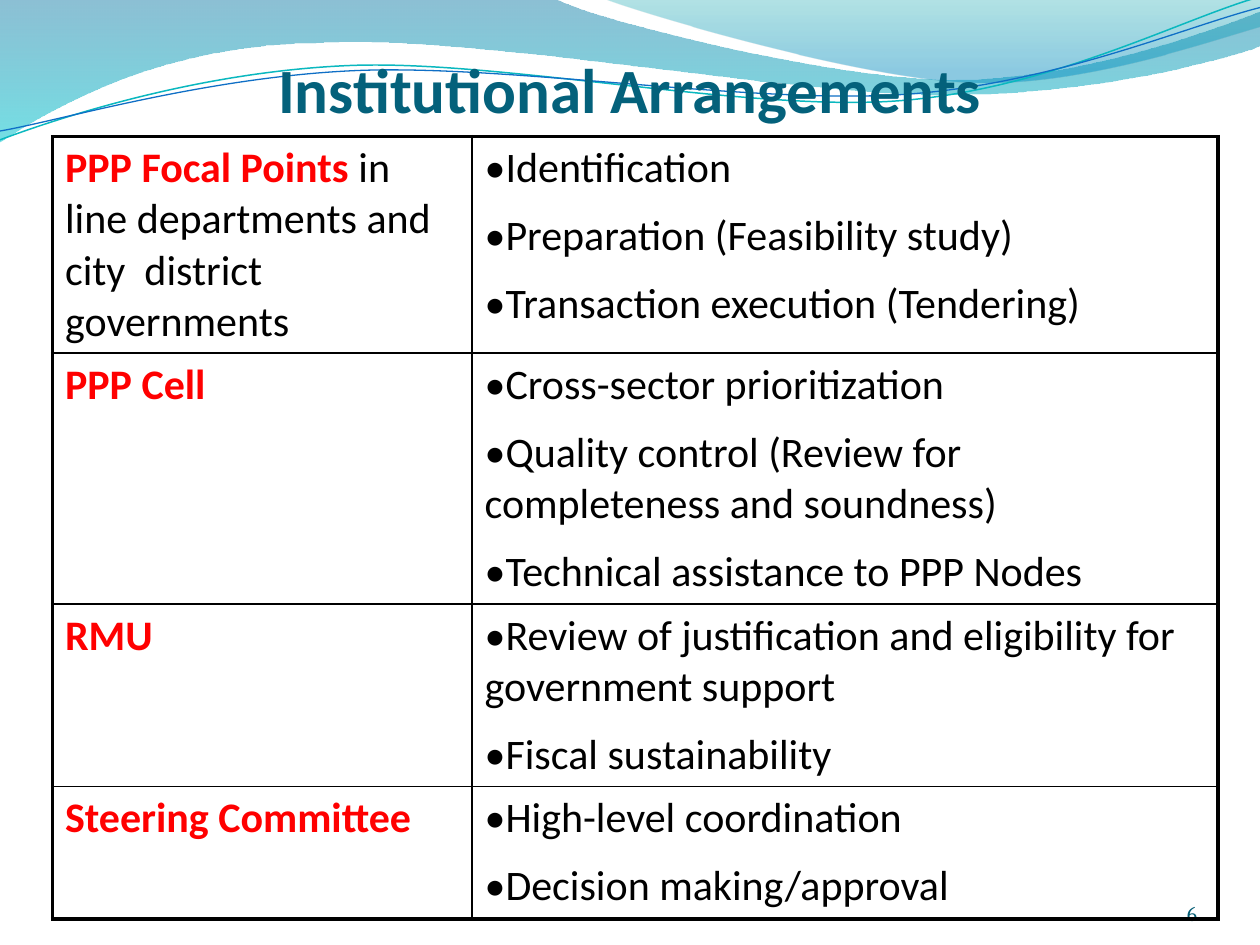
import collections
import math

import lxml.etree
import pptx
import pptx.dml.color
import pptx.enum.text
import pptx.oxml.ns
import pptx.util

Box = collections.namedtuple("Box", "left top width height")
COLUMNS, ROWS = 10, 7.5
HEADER = Box(0, 0, 10, 1.14)
TITLE = Box(0.5, 0.33, 9, 0.67)
NUMBER = Box(8.67, 6.95, 0.83, 0.4)
TABLE = Box(5 / 12, 13 / 12, 9.25, 6.21)
COLUMN_SHARES = (0.36, 0.64)
ROW_HEIGHTS = (1.72, 1.99, 1.45, 1.05)
BLACK, RED = "000000", "FF0000"
THICK, THIN = 2.25, 1
TILT = -2.7
STRAND_CENTER = (4.99, 0.58)

WAVES = [
    ((0, -0.01),
     [[(4.4, -0.01)],
      [(4.76, 0.17), (6.64, 0.63), (7.58, 0.63)],
      [(8.53, 0.63), (9.58, 0.26), (10, 0.09)],
      [(10.01, 0.36)],
      [(9.83, 0.44), (8.7, 0.76), (7.46, 0.75)],
      [(6.22, 0.75), (3.82, 0.28), (2.57, 0.34)],
      [(1.29, 0.35), (0.46, 0.83), (-0.01, 1.13)],
      [(0, -0.01)]],
     [(0, "0074A1", 45), (1, "00C6CF", 55)]),
    ((4.79, -0.01),
     [[(5.09, 0.11), (6.82, 0.62), (7.69, 0.65)],
      [(8.56, 0.69), (9.61, 0.32), (10, 0.21)],
      [(10, 0)],
      [(4.79, -0.01)]],
     [(0, "00A1A9", 30), (0.8, "008BBF", 45)]),
]
STRANDS = [
    ((0, 1.11),
     [[(0.48, 0.93), (1.58, 0.57), (2.77, 0.52)],
      [(3.95, 0.47), (5.93, 0.89), (7.13, 0.8)],
      [(8.33, 0.71), (9.38, 0.15), (9.98, -0.02)]],
     "0AB8BF", 0.85),
    ((0, 1.04),
     [[(0.47, 0.96), (1.64, 0.61), (2.83, 0.56)],
      [(4.03, 0.51), (5.97, 0.83), (7.17, 0.75)],
      [(8.36, 0.67), (9.41, 0.21), (10, 0.06)]],
     "0F6FC6", 0.75),
]
ARRANGEMENTS = [
    ("PPP Focal Points ", "in line departments and city  district governments",
     ["Identification", "Preparation (Feasibility study)",
      "Transaction execution (Tendering)"]),
    ("PPP Cell", "",
     ["Cross-sector prioritization",
      "Quality control (Review for completeness and soundness)",
      "Technical assistance to PPP Nodes"]),
    ("RMU", "",
     ["Review of justification and eligibility for government support",
      "Fiscal sustainability"]),
    ("Steering Committee", "",
     ["High-level coordination", "Decision making/approval"]),
]


def color(value):
    """Turn a hex string into a colour."""
    return pptx.dml.color.RGBColor.from_string(value)


def add_node(parent, tag, **attributes):
    """Append a drawing element with the given attributes."""
    node = lxml.etree.SubElement(parent, pptx.oxml.ns.qn(tag))
    for name, value in attributes.items():
        node.set(name, str(value))
    return node


def style_span(span, size, font, value, bold=False):
    """Set size, font, colour and weight of a run."""
    span.font.size = pptx.util.Pt(size)
    span.font.name = font
    span.font.color.rgb = color(value)
    span.font.bold = bold


def level(point):
    """Undo the tilt of a strand's point around the strands' centre."""
    angle = math.radians(-TILT)
    dx, dy = (value - middle for value, middle in zip(point, STRAND_CENTER))
    return (STRAND_CENTER[0] + dx * math.cos(angle) - dy * math.sin(angle),
            STRAND_CENTER[1] + dx * math.sin(angle) + dy * math.cos(angle))


def add_outline(page, box, start, segments, close):
    """Draw a freeform of lines and cubic curves inside a box."""
    points = [start] + [point for segment in segments for point in segment]
    placed = [(pptx.util.Inches(box.left + x), pptx.util.Inches(box.top + y))
              for x, y in points]
    builder = page.shapes.build_freeform(*placed[0], scale=1.0)
    builder.add_line_segments(placed[1:], close=close)
    shape = builder.convert_to_shape()
    shape.shadow.inherit = False
    lines = iter(list(shape.element.iter(pptx.oxml.ns.qn("a:lnTo"))))
    for segment in segments:
        group = [next(lines) for _ in segment]
        if len(group) == 3:
            curve = add_node(group[0].getparent(), "a:cubicBezTo")
            group[0].addprevious(curve)
            for line in group:
                curve.append(line[0])
                line.getparent().remove(line)
    return shape


def add_header(page, box):
    """Place the translucent waves and the thin strands."""
    for start, segments, stops in WAVES:
        wave = add_outline(page, box, start, segments, True)
        wave.line.fill.background()
        wave.fill.gradient()
        wave.fill.gradient_angle = 270
        for stop, (position, value, _) in zip(wave.fill.gradient_stops, stops):
            stop.position = position
            stop.color.rgb = color(value)
        nodes = wave.element.iter(pptx.oxml.ns.qn("a:srgbClr"))
        for node, (_, _, opacity) in zip(list(nodes), stops):
            add_node(node, "a:alpha", val=opacity * 1000)
    for start, segments, value, width in STRANDS:
        flat = [[level(point) for point in segment] for segment in segments]
        strand = add_outline(page, box, level(start), flat, False)
        strand.rotation = TILT
        strand.fill.background()
        strand.line.color.rgb = color(value)
        strand.line.width = pptx.util.Pt(width)


def add_label(page, box, text, align, top_inset, **style):
    """Place one bottom-anchored line of text."""
    label = page.shapes.add_textbox(*map(pptx.util.Inches, box))
    frame = label.text_frame
    frame.word_wrap = True
    frame.vertical_anchor = pptx.enum.text.MSO_ANCHOR.BOTTOM
    frame.margin_left = frame.margin_right = frame.margin_bottom = 0
    frame.margin_top = pptx.util.Inches(top_inset)
    frame.text = text
    para = frame.paragraphs[0]
    para.alignment = align
    style_span(para.runs[0], **style)


def space_para(para, bullet=False):
    """Give a paragraph its proportional spacing and optional bullet."""
    properties = para._p.get_or_add_pPr()
    for tag in ("a:spcBef", "a:spcAft"):
        add_node(add_node(properties, tag), "a:spcPct", val=20000)
    if bullet:
        properties.set("marL", "0")
        properties.set("indent", "0")
        add_node(properties, "a:buFont", typeface="Calibri")
        add_node(properties, "a:buChar", char="•")


def add_borders(cell, widths):
    """Draw the left, right, top and bottom borders of a cell."""
    properties = cell._tc.get_or_add_tcPr()
    for side, width in zip("LRTB", widths):
        line = add_node(properties, f"a:ln{side}", w=pptx.util.Pt(width))
        add_node(add_node(line, "a:solidFill"), "a:srgbClr", val=BLACK)


def add_arrangements(page, box):
    """Place the table of bodies and their duties."""
    count = len(ARRANGEMENTS)
    table = page.shapes.add_table(count, 2, *map(pptx.util.Inches, box)).table
    table.first_row = table.horz_banding = False
    for column, share in zip(table.columns, COLUMN_SHARES):
        column.width = pptx.util.Inches(box.width * share)
    for index, (body, detail, duties) in enumerate(ARRANGEMENTS):
        table.rows[index].height = pptx.util.Inches(ROW_HEIGHTS[index])
        top = THICK if index == 0 else THIN
        bottom = THICK if index == count - 1 else THIN
        name_cell, duty_cell = table.cell(index, 0), table.cell(index, 1)
        add_borders(name_cell, (THICK, THIN, top, bottom))
        add_borders(duty_cell, (THIN, THICK, top, bottom))
        name_cell.fill.background()
        duty_cell.fill.background()
        para = name_cell.text_frame.paragraphs[0]
        para.text = body
        style_span(para.runs[0], 24, "Calibri", RED, True)
        if detail:
            span = para.add_run()
            span.text = detail
            style_span(span, 24, "Calibri", BLACK)
        space_para(para)
        duty_cell.text_frame.text = "\n".join(duties)
        for para in duty_cell.text_frame.paragraphs:
            space_para(para, bullet=True)
            style_span(para.runs[0], 24, "Calibri", BLACK)


def main():
    """Build the slide and save it."""
    deck = pptx.Presentation()
    deck.slide_width = pptx.util.Inches(COLUMNS)
    deck.slide_height = pptx.util.Inches(ROWS)
    page = deck.slides.add_slide(deck.slide_layouts[6])
    align = pptx.enum.text.PP_ALIGN
    add_header(page, HEADER)
    add_label(page, TITLE, "Institutional Arrangements", align.CENTER, 0.05,
              size=36, font="Calibri", value="04617B", bold=True)
    add_label(page, NUMBER, "6", align.RIGHT, 0,
              size=12, font="Cambria", value="045D75")
    add_arrangements(page, TABLE)
    deck.save("out.pptx")


if __name__ == "__main__":
    main()
